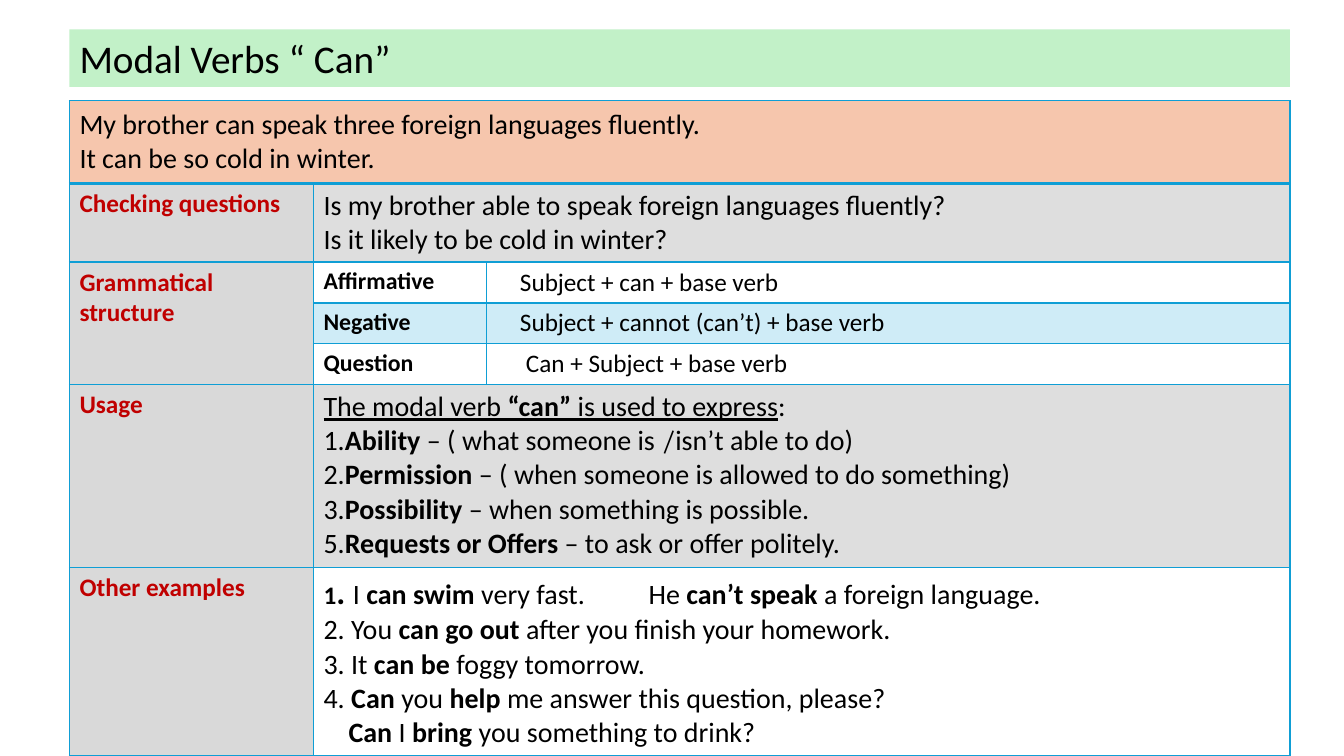
from lxml.etree import SubElement
from pptx import Presentation
from pptx.dml.color import RGBColor
from pptx.enum.text import MSO_ANCHOR, MSO_AUTO_SIZE, PP_ALIGN
from pptx.oxml.ns import qn
from pptx.util import Cm, Pt

BLACK = RGBColor(0x00, 0x00, 0x00)
RED = RGBColor(0xC0, 0x00, 0x00)
GREEN = RGBColor(0xC2, 0xF1, 0xC8)
PEACH = RGBColor(0xF6, 0xC6, 0xAD)
LABEL_GREY = RGBColor(0xD9, 0xD9, 0xD9)
TEXT_GREY = RGBColor(0xDE, 0xDE, 0xDE)
LIGHT_BLUE = RGBColor(0xCF, 0xEC, 0xF7)
BORDER_BLUE = RGBColor(0x0F, 0x9E, 0xD5)

LEFT, WIDTH = Cm(1.75), Cm(30.76)
COLUMN_WIDTHS = [6.15, 4.37, 20.24]
ROW_HEIGHTS = [2.08, 1.98, 1.03, 1.03, 1.03, 4.6, 4.75]
EXAMPLES_TAB = Cm(8.19)

# Asterisks switch bold on and off
SENTENCES = ["My brother can speak three foreign languages fluently.",
             "It can be so cold in winter."]
QUESTIONS = ["Is my brother able to speak foreign languages fluently?",
             "Is it likely to be cold in winter?"]
STRUCTURES = [("Affirmative", "Subject + can + base verb", 0.58, None),
              ("Negative", "Subject + cannot (can’t) + base verb", 0.58, LIGHT_BLUE),
              ("Question", "Can + Subject + base verb", 0.73, None)]
USAGE = ["The modal verb *“can” *is used to express:",
         "1.*Ability *– ( what someone is /isn’t able to do)",
         "2.*Permission *– ( when someone is allowed to do something)",
         "3.*Possibility *– when something is possible.",
         "5.*Requests or Offers *– to ask or offer politely."]
EXAMPLES = ["I *can swim *very fast.\tHe *can’t speak *a foreign language.",
            "2. You *can go out *after you finish your homework.",
            "3. It *can be *foggy tomorrow.",
            "4. *Can* you *help* me answer this question, please?",
            "*Can* I *bring* you something to drink?"]


def add_run(paragraph, text, **changes):
    run = paragraph.add_run()
    run.text = text
    values = {"name": "Calibri", "size": Pt(20), "bold": False, **changes}
    color = values.pop("color", BLACK)
    for name, value in values.items():
        setattr(run.font, name, value)
    run.font.color.rgb = color


def add_marked_text(paragraph, text, **changes):
    for index, part in enumerate(text.split("*")):
        if part:
            add_run(paragraph, part, **{"bold": index % 2 == 1, **changes})


def write_lines(cell, lines, **changes):
    frame = cell.text_frame
    for index, line in enumerate(lines):
        paragraph = frame.add_paragraph() if index else frame.paragraphs[0]
        add_marked_text(paragraph, line, **changes)


def indent(paragraph, length):
    paragraph._p.get_or_add_pPr().set("marL", str(length))


def set_border(cell, side, width):
    line = SubElement(cell._tc.get_or_add_tcPr(), qn(f"a:{side}"), w=str(width))
    fill = SubElement(line, qn("a:solidFill"))
    SubElement(fill, qn("a:srgbClr"), val=str(BORDER_BLUE))


def fill_cell(cell, color):
    if color is None:
        cell.fill.background()
    else:
        cell.fill.solid()
        cell.fill.fore_color.rgb = color


def add_title(slide, text):
    title = slide.shapes.title
    box = {"left": LEFT, "top": Cm(0.74), "width": WIDTH, "height": Cm(1.45)}
    for name, value in box.items():
        setattr(title, name, value)
    title.fill.solid()
    title.fill.fore_color.rgb = GREEN
    frame = title.text_frame
    frame.auto_size = MSO_AUTO_SIZE.NONE
    frame.vertical_anchor = MSO_ANCHOR.MIDDLE
    frame.paragraphs[0].alignment = PP_ALIGN.LEFT
    add_run(frame.paragraphs[0], text, size=Pt(28))


def add_grammar_table(slide):
    shape = slide.shapes.add_table(len(ROW_HEIGHTS), len(COLUMN_WIDTHS), LEFT,
                                   Cm(2.54), WIDTH, Cm(sum(ROW_HEIGHTS)))
    table = shape.table
    table.first_row = table.horz_banding = False
    for column, width in zip(table.columns, COLUMN_WIDTHS):
        column.width = Cm(width)
    for index, height in enumerate(ROW_HEIGHTS):
        table.rows[index].height = Cm(height)
        for cell in table.rows[index].cells:
            thick_side = {0: "lnB", 1: "lnT"}.get(index)
            for side in ("lnL", "lnR", "lnT", "lnB"):
                set_border(cell, side, Pt(2 if side == thick_side else 1))
            fill_cell(cell, None)
    return table


def add_label(table, row, text):
    cell = table.cell(row, 0)
    fill_cell(cell, LABEL_GREY)
    write_lines(cell, [text], size=Pt(18), bold=True, color=RED)


def add_wide_cell(table, row, column, color):
    cell = table.cell(row, column)
    cell.merge(table.cell(row, 2))
    fill_cell(cell, color)
    return cell


def add_structures(table, first_row):
    table.cell(first_row, 0).merge(table.cell(first_row + len(STRUCTURES) - 1, 0))
    for row, (form, pattern, offset, color) in enumerate(STRUCTURES, first_row):
        form_cell, pattern_cell = table.cell(row, 1), table.cell(row, 2)
        write_lines(form_cell, [form], size=Pt(17), bold=True)
        write_lines(pattern_cell, [pattern], size=Pt(18))
        indent(pattern_cell.text_frame.paragraphs[0], Cm(offset))
        for cell in (form_cell, pattern_cell):
            fill_cell(cell, color)


def add_usage(table, row):
    cell = add_wide_cell(table, row, 1, TEXT_GREY)
    write_lines(cell, USAGE)
    heading, ability = cell.text_frame.paragraphs[:2]
    # Underline the heading up to its colon
    heading.runs[-1].text = heading.runs[-1].text.rstrip(":")
    for run in heading.runs:
        run.font.underline = True
    add_run(heading, ":")
    # Set the slash in its own font
    before, after = ability.runs[-1].text.split("/")
    ability.runs[-1].text = before
    add_run(ability, "/", name="Cambria")
    add_run(ability, after)


def add_examples(table, row):
    cell = add_wide_cell(table, row, 1, None)
    first = cell.text_frame.paragraphs[0]
    add_run(first, "1", size=Pt(18), bold=True)
    add_run(first, ". ", size=Pt(24), bold=True)
    write_lines(cell, EXAMPLES)
    tabs = SubElement(first._p.get_or_add_pPr(), qn("a:tabLst"))
    SubElement(tabs, qn("a:tab"), pos=str(EXAMPLES_TAB), algn="l")
    indent(cell.text_frame.paragraphs[-1], Cm(0.63))


def main():
    presentation = Presentation()
    presentation.slide_width, presentation.slide_height = Cm(33.87), Cm(19.05)
    slide = presentation.slides.add_slide(presentation.slide_layouts[5])
    add_title(slide, "Modal Verbs “ Can”")

    # Table rows from top to bottom
    table = add_grammar_table(slide)
    sentences = add_wide_cell(table, 0, 0, PEACH)
    sentences.vertical_anchor = MSO_ANCHOR.MIDDLE
    write_lines(sentences, SENTENCES)
    add_label(table, 1, "Checking questions")
    write_lines(add_wide_cell(table, 1, 1, TEXT_GREY), QUESTIONS)
    add_label(table, 2, "Grammatical structure")
    add_structures(table, 2)
    add_label(table, 5, "Usage")
    add_usage(table, 5)
    add_label(table, 6, "Other examples")
    add_examples(table, 6)
    presentation.save("out.pptx")


if __name__ == "__main__":
    main()
